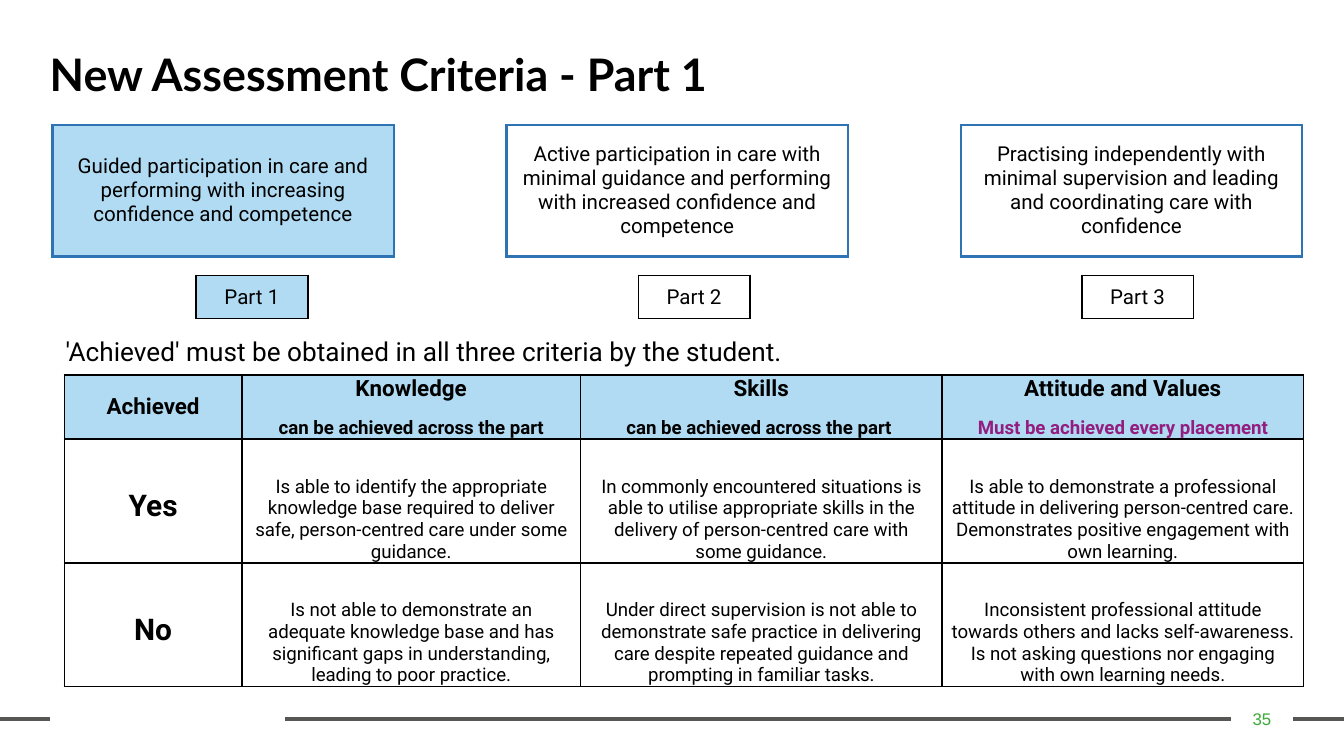
from lxml import etree
from pptx import Presentation
from pptx.dml.color import RGBColor
from pptx.enum.shapes import MSO_CONNECTOR
from pptx.enum.text import MSO_ANCHOR, PP_ALIGN
from pptx.oxml.ns import qn
from pptx.util import Inches, Pt

BLACK = RGBColor(0x00, 0x00, 0x00)
BLUE = RGBColor(0x2E, 0x74, 0xB5)
PALE = RGBColor(0xB0, 0xDB, 0xF2)
PLUM = RGBColor(0x94, 0x1D, 0x80)
GREY = RGBColor(0x57, 0x57, 0x56)
GREEN = RGBColor(0x3B, 0xAA, 0x36)
CENTER, LEFT = PP_ALIGN.CENTER, PP_ALIGN.LEFT
TOP, MIDDLE, BOTTOM = MSO_ANCHOR.TOP, MSO_ANCHOR.MIDDLE, MSO_ANCHOR.BOTTOM
STRAIGHT = MSO_CONNECTOR.STRAIGHT

# Widescreen slide, 16 by 9
prs = Presentation()
prs.slide_width = Inches(10)
prs.slide_height = Inches(10 * 9 / 16)
slide = prs.slides.add_slide(prs.slide_layouts[5])
shapes = slide.shapes


def add_grid(left, top, widths, heights):
    """Add a table without header or band styling."""
    frame = shapes.add_table(len(heights), len(widths), Inches(left), Inches(top),
                             Inches(sum(widths)), Inches(sum(heights)))
    grid = frame.table
    grid.first_row = grid.horz_banding = False
    for col, width in zip(grid.columns, widths):
        col.width = Inches(width)
    for row, height in zip(grid.rows, heights):
        row.height = Inches(height)
    return grid


def set_cell(cell, lines, edges, color, weight, fill=None, anchor=MIDDLE):
    """Fill a cell with (text, size, bold, colour) lines; edges names its borders."""
    props = cell._tc.get_or_add_tcPr()
    for side in "LRTB":
        line = etree.SubElement(props, qn("a:ln" + side), w=str(Pt(weight)))
        if side in edges:
            solid = etree.SubElement(line, qn("a:solidFill"))
            etree.SubElement(solid, qn("a:srgbClr"), val=str(color))
        else:
            etree.SubElement(line, qn("a:noFill"))
    if fill is None:
        cell.fill.background()
    else:
        cell.fill.solid()
        cell.fill.fore_color.rgb = fill
    cell.vertical_anchor = anchor
    cell.margin_left = cell.margin_right = Inches(0.07)
    cell.margin_top = cell.margin_bottom = 0
    for i, (text, size, bold, ink) in enumerate(lines):
        para = cell.text_frame.paragraphs[0] if i == 0 else cell.text_frame.add_paragraph()
        para.text = text
        para.alignment = CENTER
        if i:
            para.space_before = Pt(8)
        para.font.name, para.font.size, para.font.bold = "Roboto", Pt(size), bold
        para.font.color.rgb = ink


# Footer rule and page number
for start, end in [(9.62, 10), (2.12, 9.16), (0, 0.37)]:
    rule = shapes.add_connector(STRAIGHT, Inches(start), Inches(5.35),
                                Inches(end), Inches(5.35))
    rule.line.color.rgb = GREY
    rule.line.width = Pt(2.25)
    etree.SubElement(rule._element.spPr, qn("a:effectLst"))

page = shapes.add_textbox(Inches(9.16), Inches(5.2), Inches(0.46), Inches(0.3))
note = shapes.add_textbox(Inches(0.39), Inches(2.44), Inches(8.41), Inches(0.34))

# Title
title = shapes.title
title.left, title.top = Inches(0.27), Inches(0.34)
title.width, title.height = Inches(11.5), Inches(1.45)

# Title, page number and lead-in text
for box, text, font, size, color, align, anchor in [
    (title, "New Assessment Criteria - Part 1", "Lato", 24, BLACK, LEFT, TOP),
    (page, "35", "Arial", 9, GREEN, CENTER, MIDDLE),
    (note, "'Achieved' must be obtained in all three criteria by the student.",
     "Roboto", 14, BLACK, LEFT, MIDDLE),
]:
    frame = box.text_frame
    frame.word_wrap = True
    frame.vertical_anchor = anchor
    para = frame.paragraphs[0]
    para.text = text
    para.alignment = align
    para.font.name, para.font.size = font, Pt(size)
    para.font.bold = box is title
    para.font.color.rgb = color
title.text_frame.paragraphs[0].line_spacing = 0.9

# Part descriptions and part labels, with open gaps between the boxes
levels = [
    "Guided participation in care and performing with increasing confidence and competence",
    "Active participation in care with minimal guidance and performing with increased "
    "confidence and competence",
    "Practising independently with minimal supervision and leading and coordinating "
    "care with confidence",
]
parts = ["Part 1", "Part 2", "Part 3"]
for top, height, widths, first, texts, color, weight in [
    (0.93, 0.98, [2.54, 0.84, 2.54, 0.84, 2.54], 0, levels, BLUE, 1.5),
    (2.05, 0.32, [1.07, 0.83, 2.46, 0.83, 2.47, 0.83, 0.82], 1, parts, BLACK, 1),
]:
    grid = add_grid(0.39, top, widths, [height])
    last = len(widths) - 1
    for c in range(len(widths)):
        if c % 2 == first:
            set_cell(grid.cell(0, c), [(texts[c // 2], 11, False, BLACK)], "LRTB",
                     color, weight, PALE if c == first else None)
        else:
            edges = ("L" if c > 0 else "") + ("R" if c < last else "")
            set_cell(grid.cell(0, c), [], edges, color, weight)

# Criteria table
heads = [
    ("Knowledge", "can be achieved across the part", BLACK),
    ("Skills", "can be achieved across the part ", BLACK),
    ("Attitude and Values", "Must be achieved every placement", PLUM),
]
rows = [
    ("Yes",
     "Is able to identify the appropriate knowledge base required to deliver safe, "
     "person-centred care under some guidance.",
     "In commonly encountered situations is able to utilise appropriate skills in the "
     "delivery of person-centred care with some guidance.",
     "Is able to demonstrate a professional attitude in delivering person-centred "
     "care. Demonstrates positive engagement with own learning."),
    ("No",
     "Is not able to demonstrate an adequate knowledge base and has significant gaps in "
     "understanding, leading to poor practice.",
     "Under direct supervision is not able to demonstrate safe practice in delivering "
     "care despite repeated guidance and prompting in familiar tasks.",
     "Inconsistent professional attitude towards others and lacks "
     "self-awareness. Is not asking questions nor engaging with own learning needs."),
]
grid = add_grid(0.48, 2.79, [1.32, 2.52, 2.69, 2.69], [0.47, 0.92, 0.92])
set_cell(grid.cell(0, 0), [("Achieved", 12, True, BLACK)], "LRTB", BLACK, 1, PALE)
for c, (name, rule, ink) in enumerate(heads, 1):
    set_cell(grid.cell(0, c), [(name, 12, True, BLACK), (rule, 10, True, ink)],
             "LRTB", BLACK, 1, PALE)
for r, (mark, *texts) in enumerate(rows, 1):
    set_cell(grid.cell(r, 0), [(mark, 16, True, BLACK)], "LRTB", BLACK, 1)
    grid.cell(r, 0).margin_top = Inches(0.08)
    for c, text in enumerate(texts, 1):
        set_cell(grid.cell(r, c), [(text, 10, False, BLACK)], "LRTB", BLACK, 1,
                 anchor=BOTTOM)

prs.save("out.pptx")
